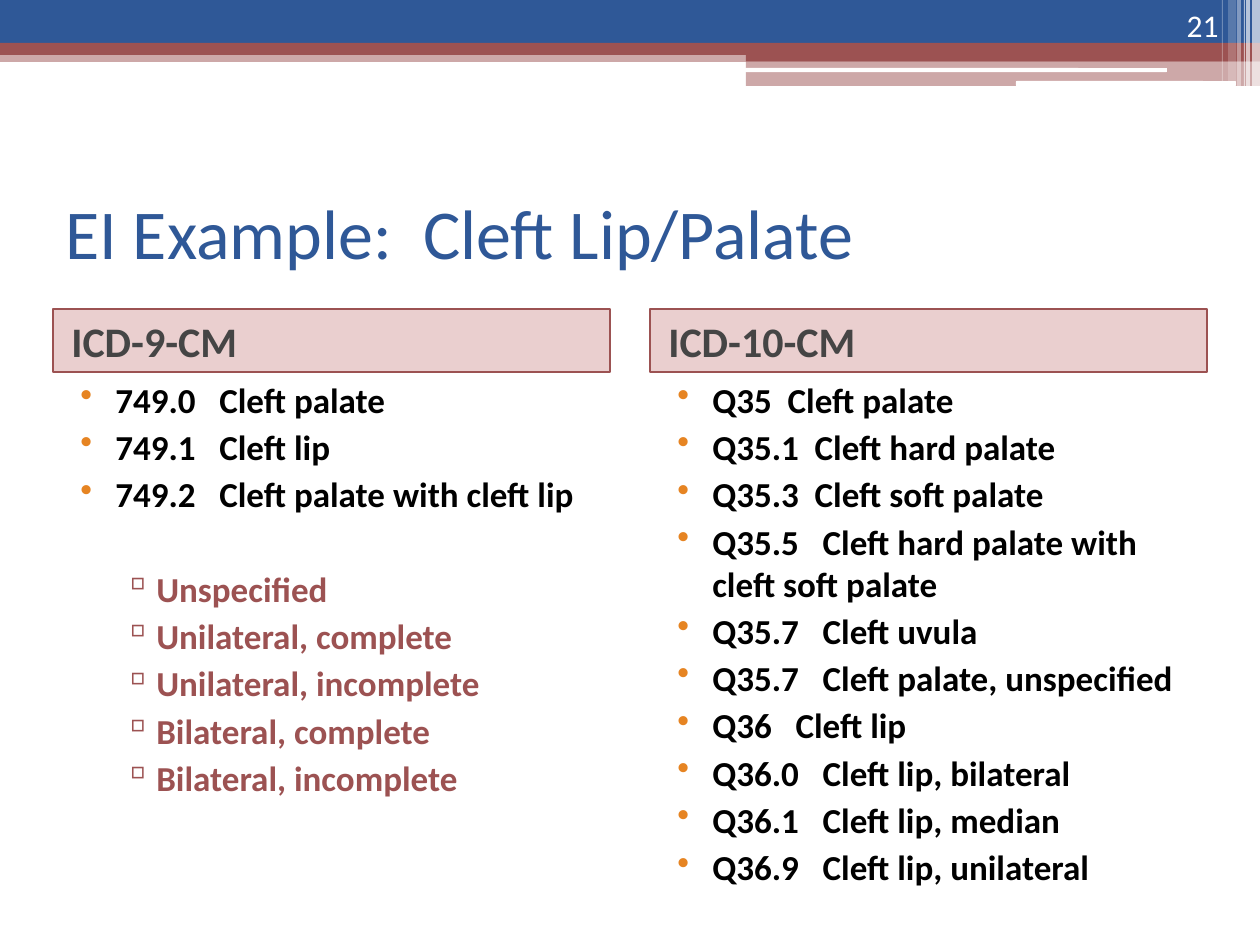
from lxml.etree import SubElement
from pptx import Presentation
from pptx.dml.color import RGBColor
from pptx.enum.shapes import MSO_SHAPE as SHAPE
from pptx.enum.text import MSO_ANCHOR as ANCHOR, PP_ALIGN as ALIGN
from pptx.oxml.ns import qn
from pptx.util import Emu, Pt

PX = 914400 / 126
BLUE, RED, WHITE, ORANGE = "2F5897", "9C5252", "FFFFFF", "E68422"

CODES_9 = ["749.0   Cleft palate", "749.1   Cleft lip", "749.2   Cleft palate with cleft lip"]
SUBTYPES = ["Unspecified", "Unilateral, complete", "Unilateral, incomplete",
            "Bilateral, complete", "Bilateral, incomplete"]
CODES_10 = ["Q35  Cleft palate", "Q35.1  Cleft hard palate", "Q35.3  Cleft soft palate",
            "Q35.5   Cleft hard palate with cleft soft palate", "Q35.7   Cleft uvula",
            "Q35.7   Cleft palate, unspecified", "Q36   Cleft lip",
            "Q36.0   Cleft lip, bilateral", "Q36.1   Cleft lip, median",
            "Q36.9   Cleft lip, unilateral"]


def px(n):
    return Emu(round(n * PX))


def rgb(color):
    return RGBColor.from_string(color)


def add_bar(s, x, y, w, h, color, alpha=100, line=None, kind=SHAPE.RECTANGLE):
    sp = s.shapes.add_shape(kind, px(x), px(y), px(w), px(h))
    sp.shadow.inherit = False
    sp.fill.solid()
    sp.fill.fore_color.rgb = rgb(color)
    if alpha < 100:
        clr = sp.fill._xPr.find(qn("a:solidFill"))[0]
        SubElement(clr, qn("a:alpha"), val=str(alpha * 1000))
    if line:
        sp.line.color.rgb = rgb(line)
        sp.line.width = Pt(1)
    else:
        sp.line.fill.background()
    return sp


def add_frame(s, x, y, w, h, anchor):
    tf = s.shapes.add_textbox(px(x), px(y), px(w), px(h)).text_frame
    tf.word_wrap = True
    tf.vertical_anchor = anchor
    return tf


def add_run(p, text, size, color, bold=False):
    r = p.add_run()
    r.text = text
    r.font.name = "Calibri"
    r.font.size = Pt(size)
    r.font.bold = bold
    r.font.color.rgb = rgb(color)


def set_bullet(p, char, color, left, hang):
    pPr = p._p.get_or_add_pPr()
    pPr.set("marL", str(px(left)))
    pPr.set("indent", str(-px(hang)))
    clr = SubElement(pPr, qn("a:buClr"))
    SubElement(clr, qn("a:srgbClr"), val=color)
    SubElement(pPr, qn("a:buChar"), char=char)


def add_banner(s, x, y, w, h):
    add_bar(s, x, y + 50, w, 12, RED, 50)
    add_bar(s, x, y, w, 43, BLUE)
    add_bar(s, x, y + 43, w, 12, RED)
    tab = 746
    add_bar(s, x + tab, y + 49, w - tab, 12, RED)
    add_bar(s, x + tab, y + 61, w - tab, h - 61, RED, 50)
    for left, top, width, height in [(745, 68, 422, 4), (1016, 81, 220, 5)]:
        add_bar(s, x + left, y + top, width, height, WHITE, kind=SHAPE.ROUNDED_RECTANGLE)
    stripes = [(1252, 8, 86, 65), (1246, 4, 86, 65), (1244, 1, 86, 60),
               (1237, 4, 86, 40), (1228, 8, 81, 20), (1222, 1, 81, 30)]
    for left, width, height, alpha in stripes:
        add_bar(s, x + left, y, width, height, WHITE, alpha)


def add_page_number(s, x, y, w, h, number):
    p = add_frame(s, x, y, w, h, ANCHOR.BOTTOM).paragraphs[0]
    p.alignment = ALIGN.RIGHT
    add_run(p, number, 18, WHITE)


def add_title(s, x, y, w, h, text):
    p = add_frame(s, x, y, w, h, ANCHOR.MIDDLE).paragraphs[0]
    add_run(p, text, 40, BLUE)


def add_column(s, x, y, w, h, heading, codes, subtypes=()):
    head_h = 63
    tf = add_bar(s, x, y, w, head_h, "AE4040", 25, RED).text_frame
    tf.word_wrap = True
    tf.vertical_anchor = ANCHOR.MIDDLE
    p = tf.paragraphs[0]
    p.alignment = ALIGN.LEFT
    p.space_before = Pt(3)
    p._p.get_or_add_pPr().set("marL", str(px(6)))
    add_run(p, heading, 24, "454545", True)

    tf = add_frame(s, x, y + head_h, w, h - head_h, ANCHOR.TOP)
    for i, text in enumerate([*codes, *subtypes]):
        p = tf.paragraphs[0] if i == 0 else tf.add_paragraph()
        p.space_before = Pt(30 if i == len(codes) else 3)
        if i < len(codes):
            set_bullet(p, "•", ORANGE, 50, 35)
            add_run(p, text, 20, "000000", True)
        else:
            p.level = 1
            set_bullet(p, "▫", RED, 91, 34)
            add_run(p, text, 20, RED, True)


def main():
    prs = Presentation()
    prs.slide_width, prs.slide_height = px(1260), px(945)
    s = prs.slides.add_slide(prs.slide_layouts[6])
    add_banner(s, 0, 0, 1260, 86)
    add_title(s, 53, 158, 1155, 147, "EI Example:  Cleft Lip/Palate")
    add_column(s, 53, 309, 557, 599, "ICD-9-CM", CODES_9, SUBTYPES)
    add_column(s, 650, 309, 557, 599, "ICD-10-CM", CODES_10)
    add_page_number(s, 1126, 0, 105, 50, "21")
    prs.save("out.pptx")


if __name__ == "__main__":
    main()
